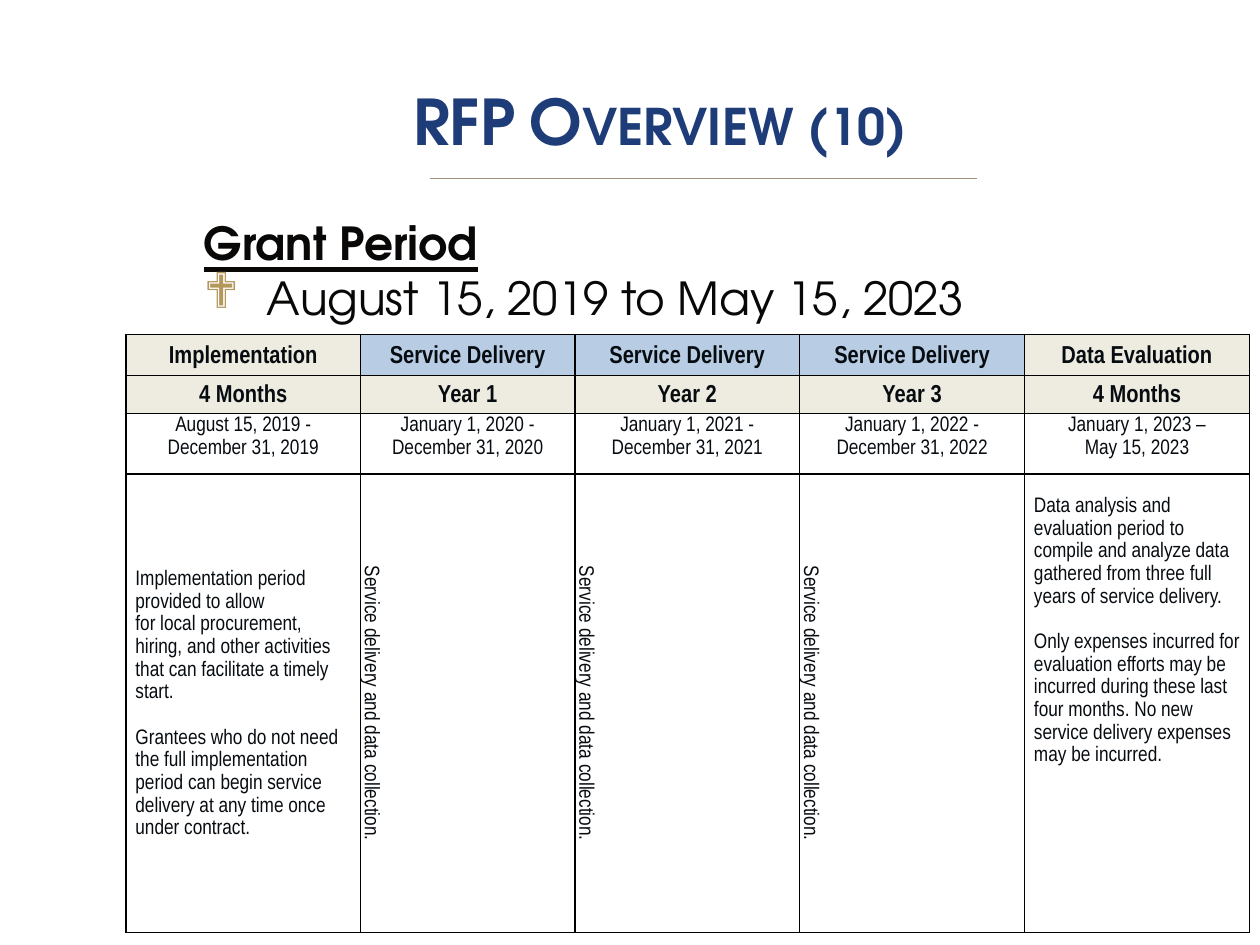
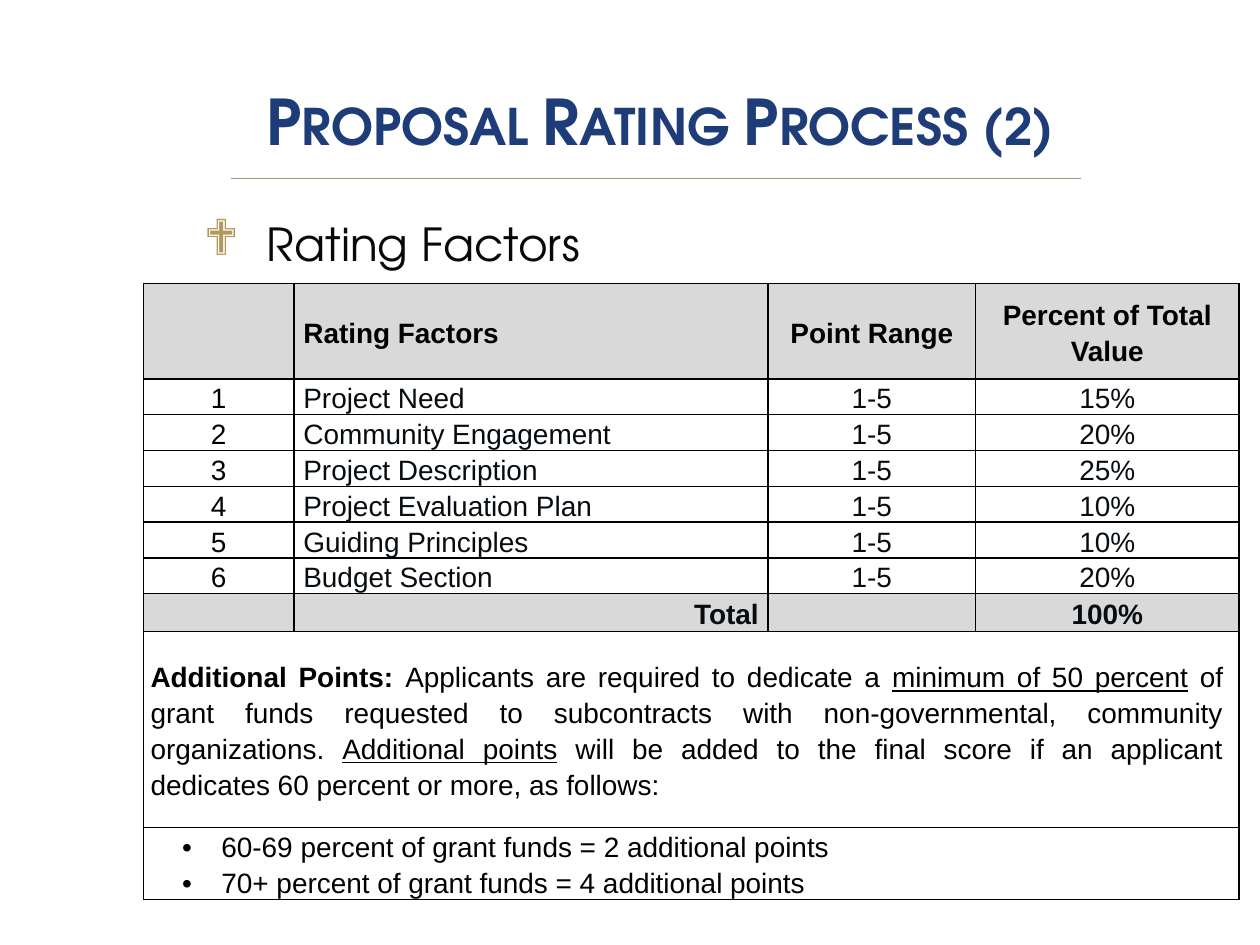
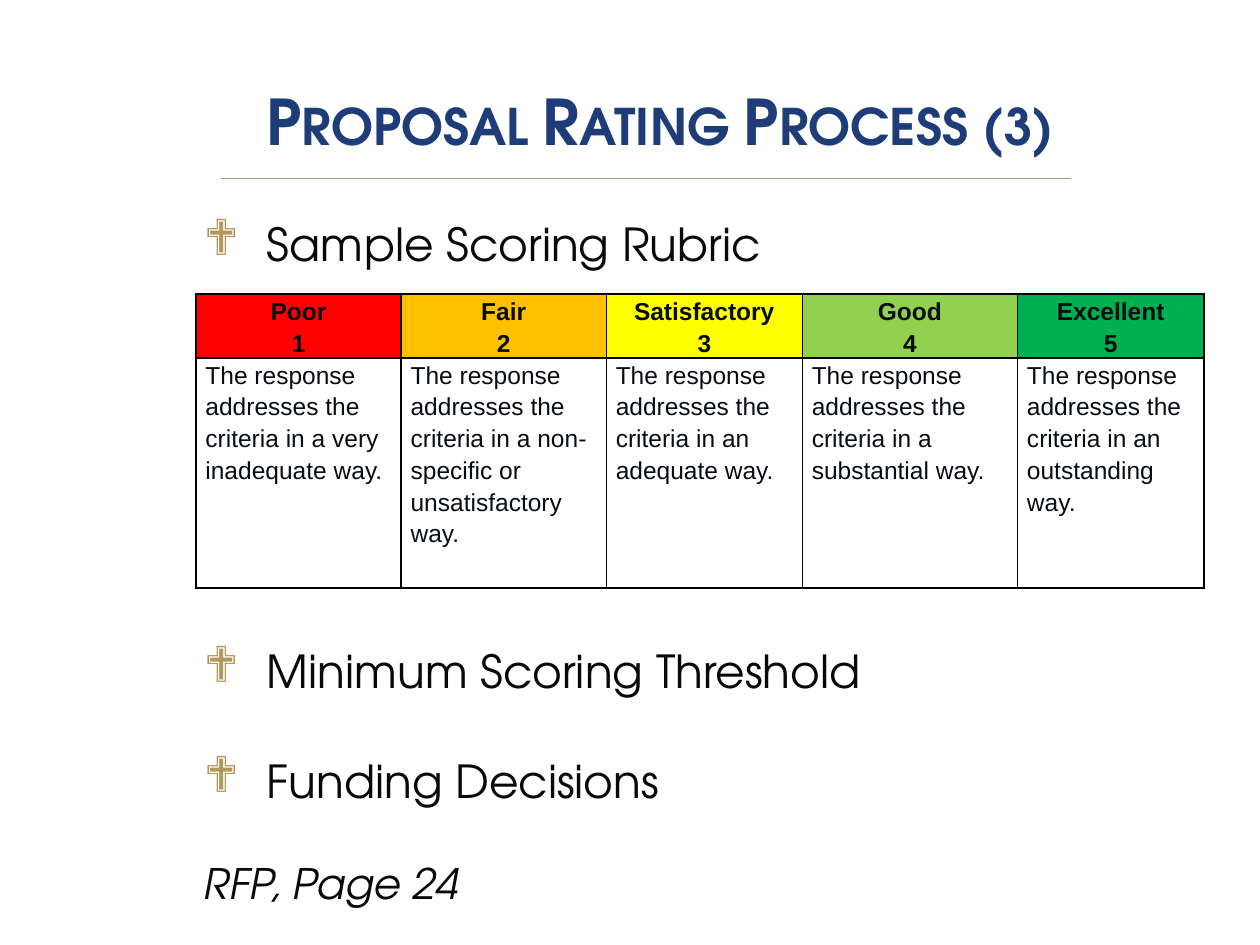
import pptx
import pptx.dml.color
import pptx.enum.shapes
import pptx.enum.text
import pptx.oxml.ns
import pptx.util
from lxml import etree

Pt = pptx.util.Pt
ALIGN = pptx.enum.text.PP_ALIGN
MIDDLE = pptx.enum.text.MSO_ANCHOR.MIDDLE
TOP = pptx.enum.text.MSO_ANCHOR.TOP
qn = pptx.oxml.ns.qn

COLORS = {
    "title": "1E3C78", "body": "090807", "ink": "070C11", "black": "000000",
    "rule": "A0937C", "gold": "B4975A", "white": "FFFFFF", "cream": "EEECE1",
    "sky": "B8CCE4", "gray": "D9D9D9", "red": "FF0000", "orange": "FFC000",
    "yellow": "FFFF00", "lime": "92D050", "green": "00B050",
}
DISPLAY = "TeX Gyre Adventor"
TITLE_FONT = {"name": DISPLAY, "size": Pt(36), "bold": True}
BODY_FONT = {"name": DISPLAY, "size": Pt(26)}
DIAMOND = {"char": "❖", "font": "Wingdings", "color": "gold", "size": "110000",
           "left": 36, "hang": -36}
DOT = {"char": "•", "font": "Arial", "color": "black", "size": "100000",
       "left": 44.5, "hang": -22.5}


def write_paragraph(paragraph, text, font, color, layout, bullet=None):
    properties = paragraph._p.get_or_add_pPr()
    if bullet:
        properties.set("marL", str(Pt(bullet["left"])))
        properties.set("indent", str(Pt(bullet["hang"])))
        if "char" in bullet:
            bullet_color = etree.SubElement(properties, qn("a:buClr"))
            etree.SubElement(bullet_color, qn("a:srgbClr"), val=COLORS[bullet["color"]])
            etree.SubElement(properties, qn("a:buSzPct"), val=bullet["size"])
            etree.SubElement(properties, qn("a:buFont"), typeface=bullet["font"])
            etree.SubElement(properties, qn("a:buChar"), char=bullet["char"])
    for name, value in layout.items():
        setattr(paragraph, name, value)
    pieces = [(text, {})] if isinstance(text, str) else text
    for piece, changes in pieces:
        run = paragraph.add_run()
        run.text = piece
        for name, value in {**font, **changes}.items():
            setattr(run.font, name, value)
        run.font.color.rgb = pptx.dml.color.RGBColor.from_string(COLORS[color])


def add_table(slide, left, top, widths, spacing, rows):
    heights = [height for height, cells in rows]
    table = slide.shapes.add_table(
        len(rows), len(widths), Pt(left), Pt(top), Pt(sum(widths)), Pt(sum(heights))
    ).table
    table.first_row = table.horz_banding = False
    for column, width in zip(table.columns, widths):
        column.width = Pt(width)
    for row_index, (height, cells) in enumerate(rows):
        table.rows[row_index].height = Pt(height)
        if len(cells) == 1:
            table.cell(row_index, 0).merge(table.cell(row_index, len(widths) - 1))
        for column_index in range(len(widths)):
            cell = table.cell(row_index, column_index)
            text, style = cells[min(column_index, len(cells) - 1)]
            properties = cell._tc.get_or_add_tcPr()
            for side in ("lnL", "lnR", "lnT", "lnB"):
                border = etree.SubElement(properties, qn("a:" + side), w=str(Pt(1)))
                solid = etree.SubElement(border, qn("a:solidFill"))
                etree.SubElement(solid, qn("a:srgbClr"), val=COLORS["black"])
            cell.fill.solid()
            cell.fill.fore_color.rgb = pptx.dml.color.RGBColor.from_string(
                COLORS[style.get("fill", "white")])
            if cell.is_spanned:
                continue
            margins = style.get("margins", (5.4, 0, 5.4, 0))
            for side, margin in zip(("left", "top", "right", "bottom"), margins):
                setattr(cell, "margin_" + side, Pt(margin))
            cell.vertical_anchor = style.get("anchor", TOP)
            if style.get("vertical"):
                properties.set("vert", "vert")
            lines = text.split("\n") if isinstance(text, str) else [text]
            for line_index, line in enumerate(lines):
                paragraph = (cell.text_frame.add_paragraph() if line_index
                             else cell.text_frame.paragraphs[0])
                layout = {"line_spacing": spacing, "alignment": style.get("align", ALIGN.LEFT)}
                if line_index == style.get("gap_before"):
                    layout["space_before"] = Pt(13)
                write_paragraph(paragraph, line, style["font"], style.get("color", "ink"),
                                layout, style.get("bullet"))


presentation = pptx.Presentation()
presentation.slide_width = Pt(720)
presentation.slide_height = Pt(540)

pages = [
    ("RFP Overview (10)", 246, 558, 119.5, [
        ("Grant Period", {"bold": True, "underline": True}, 0, None),
        ("August 15, 2019 to May 15, 2023", {}, 0, DIAMOND),
    ]),
    ("Proposal Rating Process (2)", 132, 618, 120, [("Rating Factors", {}, 0, DIAMOND)]),
    ("Proposal Rating Process (3)", 126, 612, 120, [
        ("Sample Scoring Rubric", {}, 0, DIAMOND),
        ("Minimum Scoring Threshold", {}, 213, DIAMOND),
        ("Funding Decisions", {}, 31.5, DIAMOND),
        ("RFP, Page 24", {"size": Pt(24), "italic": True}, 28.5, None),
    ]),
]
slides = []
for title, rule_left, rule_right, body_top, body_lines in pages:
    slide = presentation.slides.add_slide(presentation.slide_layouts[6])
    slides.append(slide)

    body = slide.shapes.add_textbox(Pt(109.5), Pt(body_top), Pt(576), Pt(397)).text_frame
    body.word_wrap = True
    for index, (text, changes, gap, bullet) in enumerate(body_lines):
        paragraph = body.add_paragraph() if index else body.paragraphs[0]
        layout = {"space_before": Pt(gap)} if gap else {}
        write_paragraph(paragraph, text, {**BODY_FONT, **changes}, "body", layout, bullet)

    heading = slide.shapes.add_textbox(Pt(37.5), Pt(36), Pt(648), Pt(66)).text_frame
    heading.word_wrap = True
    heading.vertical_anchor = MIDDLE
    heading.margin_top = heading.margin_bottom = 0
    paragraph = heading.paragraphs[0]
    write_paragraph(paragraph, title, TITLE_FONT, "title", {"alignment": ALIGN.CENTER},
                    {"left": 31.5, "hang": 0})
    paragraph.runs[0]._r.get_or_add_rPr().set("cap", "small")

    rule = slide.shapes.add_connector(
        pptx.enum.shapes.MSO_CONNECTOR.STRAIGHT, Pt(rule_left), Pt(102), Pt(rule_right), Pt(102))
    rule.line.width = Pt(0.75)
    rule.line.color.rgb = pptx.dml.color.RGBColor.from_string(COLORS["rule"])
    etree.SubElement(rule._element.spPr, qn("a:effectLst"))

period_slide, factors_slide, rubric_slide = slides

narrow = {"name": "Arial Narrow", "size": Pt(12)}
phase = {"font": {**narrow, "size": Pt(14), "bold": True}, "align": ALIGN.CENTER,
         "anchor": MIDDLE, "fill": "cream"}
service = {**phase, "fill": "sky"}
dates = {"font": narrow, "align": ALIGN.CENTER}
sideways = {**dates, "anchor": MIDDLE, "vertical": True}
implementation = {"font": narrow, "anchor": MIDDLE, "gap_before": 2}
evaluation = {"font": narrow, "margins": (5.4, 11.5, 5, 0), "gap_before": 1}
implementation_text = (
    "Implementation period provided to allow\n"
    "for local procurement, hiring, and other activities that can facilitate a timely start.\n"
    "Grantees who do not need the full implementation period can begin service delivery "
    "at any time once under contract.")
evaluation_text = (
    "Data analysis and evaluation period to compile and analyze data gathered from "
    "three full years of service delivery.\n"
    "Only expenses incurred for evaluation efforts may be incurred during these last "
    "four months. No new service delivery expenses may be incurred.")
add_table(period_slide, 72, 191, [134, 122.5, 128.5, 128.5, 128.5], 1.15, [
    (23.7, [("Implementation", phase)] + [("Service Delivery", service)] * 3
     + [("Data Evaluation", phase)]),
    (21.7, [(text, phase) for text in ("4 Months", "Year 1", "Year 2", "Year 3", "4 Months")]),
    (34.5, [("August 15, 2019 -\nDecember 31, 2019", dates),
            ("January 1, 2020 -\nDecember 31, 2020", dates),
            ("January 1, 2021 - December 31, 2021", dates),
            ("January 1, 2022 - December 31, 2022", dates),
            ("January 1, 2023 –\nMay 15, 2023", dates)]),
    (262, [(implementation_text, implementation)]
     + [("Service delivery and data collection.", sideways)] * 3
     + [(evaluation_text, evaluation)]),
])

regular = {"name": "Arial", "size": Pt(16)}
factor = {"font": regular, "anchor": MIDDLE}
score = {**factor, "align": ALIGN.CENTER}
number = {**score, "color": "black", "margins": (0, 0, 0, 0)}
total = {**score, "font": {**regular, "bold": True}, "fill": "gray"}
header = {**total, "color": "black"}
additional = {**number, "align": ALIGN.JUSTIFY, "margins": (0, 0, 9, 0),
              "bullet": {"left": 4, "hang": 0}}
additional_text = [
    ("Additional Points: ", {"bold": True}),
    ("Applicants are required to dedicate a ", {}),
    ("minimum of 50 percent", {"underline": True}),
    (" of grant funds requested to subcontracts with non-governmental, "
     "community organizations. ", {}),
    ("Additional points", {"underline": True}),
    (" will be added to the final score if an applicant dedicates 60 percent or more, "
     "as follows: ", {}),
]
factors = [("Project Need", "15%"), ("Community Engagement", "20%"),
           ("Project Description", "25%"), ("Project Evaluation Plan", "10%"),
           ("Guiding Principles", "10%"), ("Budget Section", "20%")]
add_table(factors_slide, 82, 162, [86, 271, 118.5, 150.5], Pt(20.45), [
    (54.5, [("", header), ("Rating Factors", {**header, "align": ALIGN.JUSTIFY}),
            ("Point Range", header), ("Percent of Total Value", header)]),
    *[(20.45, [(str(index), number), (name, factor), ("1-5", score), (percent, score)])
      for index, (name, percent) in enumerate(factors, 1)],
    (20.45, [("", total), ("Total", {**total, "align": ALIGN.RIGHT}), ("", total),
             ("100%", total)]),
    (112, [(additional_text, additional)]),
    (41, [("60-69 percent of grant funds = 2 additional points\n"
           "70+ percent of grant funds = 4 additional points",
           {"font": regular, "color": "black", "margins": (0, 0, 0, 0), "bullet": DOT})]),
])

rubric_font = {"name": "Arial", "size": Pt(14)}
grade = {"font": {**rubric_font, "bold": True}, "align": ALIGN.CENTER}
grades = [
    ("Poor", "red", "a very inadequate"),
    ("Fair", "orange", "a non-specific or unsatisfactory"),
    ("Satisfactory", "yellow", "an adequate"),
    ("Good", "lime", "a substantial"),
    ("Excellent", "green", "an outstanding"),
]
add_table(rubric_slide, 112, 168, [117.25, 117.25, 112, 123, 106.5], Pt(18.1), [
    (36.5, [(f"{name}\n{points}", {**grade, "fill": fill})
            for points, (name, fill, manner) in enumerate(grades, 1)]),
    (131.5, [(f"The response addresses the criteria in {manner} way.", {"font": rubric_font})
             for name, fill, manner in grades]),
])

presentation.save("out.pptx")
